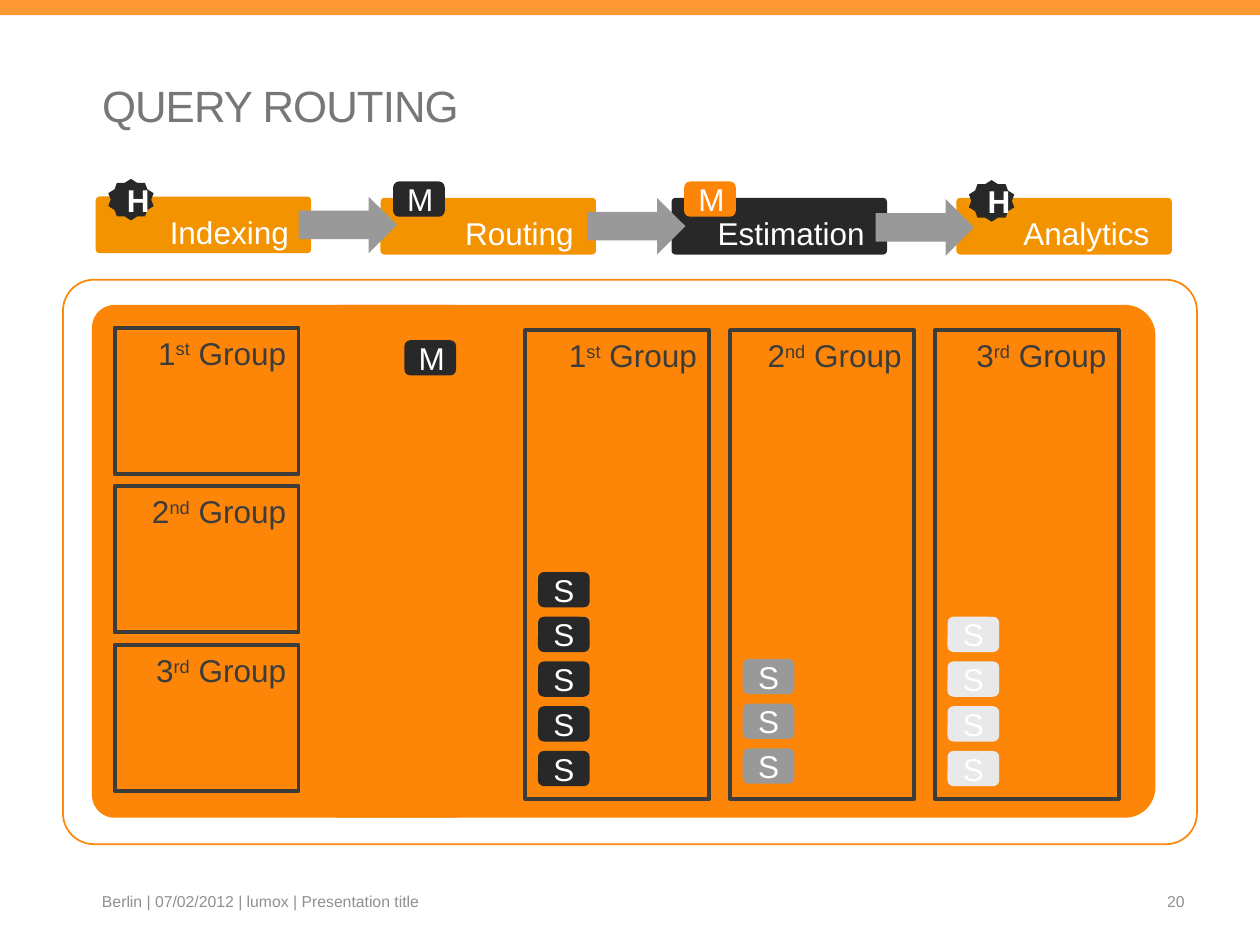
from dataclasses import dataclass
from pptx import Presentation
from pptx.dml.color import RGBColor
from pptx.enum.shapes import MSO_SHAPE
from pptx.enum.text import MSO_ANCHOR, MSO_AUTO_SIZE, PP_ALIGN
from pptx.util import Inches, Pt

ORANGE, AMBER, DARK = "FD8608", "F39300", "282828"
GREY, PALE, INK, WHITE = "999999", "E9E9E9", "3C3C3B", "FFFFFF"
FOOTER_GREY = "8F918E"

deck = Presentation()
deck.slide_width, deck.slide_height = Inches(10), Inches(7.5)
COLUMN, ROW = deck.slide_width / 100, deck.slide_height / 75
slide = deck.slides.add_slide(deck.slide_layouts[5])


@dataclass(frozen=True)
class Box:
    col: float
    row: float
    cols: float
    rows: float

    def emu(self) -> list[int]:
        return [round(self.col * COLUMN), round(self.row * ROW),
                round(self.cols * COLUMN), round(self.rows * ROW)]


@dataclass(frozen=True)
class Stage:
    name: str
    col: float
    row: float
    fill: str
    badge: str
    badge_fill: str


@dataclass(frozen=True)
class Group:
    number: str
    suffix: str
    servers: int
    server_fill: str
    last_row: float


def paint(color, value: str) -> None:
    color.rgb = RGBColor.from_string(value)


def write(shape, *parts: str, size=18, color=WHITE, bold=False, spacing=None,
          align=PP_ALIGN.CENTER, anchor=MSO_ANCHOR.MIDDLE, left=0.1, top=0.05,
          line=None) -> None:
    frame = shape.text_frame
    frame.word_wrap = True
    frame.auto_size = MSO_AUTO_SIZE.NONE
    frame.vertical_anchor = anchor
    frame.margin_left, frame.margin_top = Inches(left), Inches(top)
    frame.margin_right, frame.margin_bottom = Inches(0.1), Inches(0.05)
    paragraph = frame.paragraphs[0]
    paragraph.alignment = align
    if line:
        paragraph.line_spacing = Pt(line)
    for index, part in enumerate(parts):
        run = paragraph.add_run()
        run.text = part
        run.font.name, run.font.size, run.font.bold = "Arial", Pt(size), bold
        paint(run.font.color, color)
        properties = run._r.get_or_add_rPr()
        if index == 1:
            properties.set("baseline", "30000")
        if spacing:
            properties.set("spc", str(round(spacing * 100)))


def draw(kind: MSO_SHAPE, box: Box, fill=None, line=None, width=1.0, corner=None):
    shape = slide.shapes.add_shape(kind, *box.emu())
    shape.shadow.inherit = False
    if fill:
        shape.fill.solid()
        paint(shape.fill.fore_color, fill)
    else:
        shape.fill.background()
    if line:
        paint(shape.line.color, line)
        shape.line.width = Pt(width)
    else:
        shape.line.fill.background()
    if corner is not None:
        shape.adjustments[0] = corner
    return shape


def draw_server(col: float, row: float, letter: str, fill: str) -> None:
    write(draw(MSO_SHAPE.ROUNDED_RECTANGLE, Box(col, row, 4.1, 2.8), fill), letter)


def draw_stage(stage: Stage) -> None:
    box = Box(stage.col, stage.row, 17.1, 4.5)
    write(draw(MSO_SHAPE.ROUNDED_RECTANGLE, box, stage.fill, corner=0.069),
          stage.name + " ", align=PP_ALIGN.RIGHT, top=0.16)


def draw_badge(stage: Stage) -> None:
    if stage.badge == "M":
        draw_server(stage.col + 1, stage.row - 1.3, stage.badge, stage.badge_fill)
    else:
        star = draw(MSO_SHAPE.STAR_10_POINT,
                    Box(stage.col + 1, stage.row - 1.4, 3.6, 3.3), stage.badge_fill)
        write(star, stage.badge, bold=True)


def draw_group(group: Group, box: Box) -> None:
    write(draw(MSO_SHAPE.RECTANGLE, box, line=INK, width=2.25),
          group.number, group.suffix, " Group",
          color=INK, align=PP_ALIGN.RIGHT, anchor=MSO_ANCHOR.TOP)


def draw_note(box: Box, text: str, align: PP_ALIGN, left: float) -> None:
    write(slide.shapes.add_textbox(*box.emu()), text,
          size=9, color=FOOTER_GREY, align=align, left=left)


STAGES = [
    Stage("Indexing", 7.6, 15.6, AMBER, "H", DARK),
    Stage("Routing", 30.2, 15.7, AMBER, "M", DARK),
    Stage("Estimation", 53.3, 15.7, DARK, "M", ORANGE),
    Stage("Analytics", 75.9, 15.7, AMBER, "H", DARK),
]
GROUPS = [
    Group("1", "st", 5, DARK, 59.6),
    Group("2", "nd", 3, GREY, 59.4),
    Group("3", "rd", 4, PALE, 59.6),
]

draw(MSO_SHAPE.RECTANGLE, Box(0, 0, 100, 1.2), "FF9933")
draw(MSO_SHAPE.ROUNDED_RECTANGLE, Box(5, 22.2, 90, 44.8), line="FD8709", corner=0.055)
for panel in (Box(7.3, 24.2, 30.5, 40.7), Box(24.6, 24.2, 67.1, 40.7)):
    draw(MSO_SHAPE.ROUNDED_RECTANGLE, panel, ORANGE, corner=0.059)

for stage in STAGES:
    draw_stage(stage)
for step in range(len(STAGES) - 1):
    draw(MSO_SHAPE.RIGHT_ARROW,
         Box(23.7 + 22.9 * step, 15.6 + 0.1 * step, 7.8, 4.5), GREY)
for stage in STAGES:
    draw_badge(stage)

draw_server(32.1, 27, "M", DARK)
for place, group in enumerate(GROUPS):
    draw_group(group, Box(9.1, 26 + 12.6 * place, 14.6, 11.6))
    column = 41.7 + 16.25 * place
    draw_group(group, Box(column, 26.2, 14.6, 37.2))
    for level in range(group.servers):
        draw_server(column + 1, group.last_row - 3.55 * level, "S", group.server_fill)

title = slide.shapes.title
title.left, title.top, title.width, title.height = Box(5, 6.3, 70.9, 15.9).emu()
write(title, "QUERY ROUTING", size=25, color="767776", spacing=-0.5, line=26,
      align=PP_ALIGN.LEFT, anchor=MSO_ANCHOR.TOP, left=0.31)

draw_note(Box(8.1, 69.5, 31.7, 4), "Berlin | 07/02/2012 | lumox | Presentation title",
          PP_ALIGN.LEFT, 0)
draw_note(Box(71.7, 69.5, 23.3, 4), "20", PP_ALIGN.RIGHT, 0.1)

deck.save("out.pptx")
